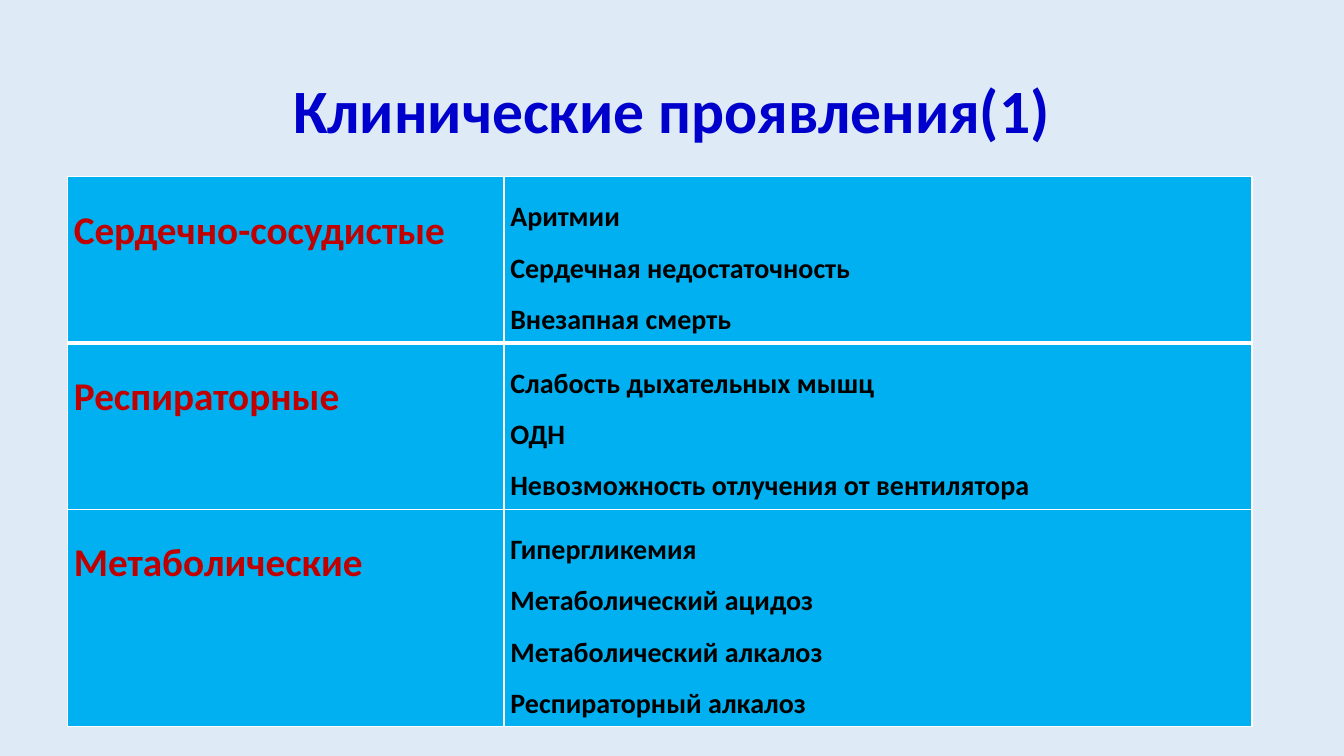
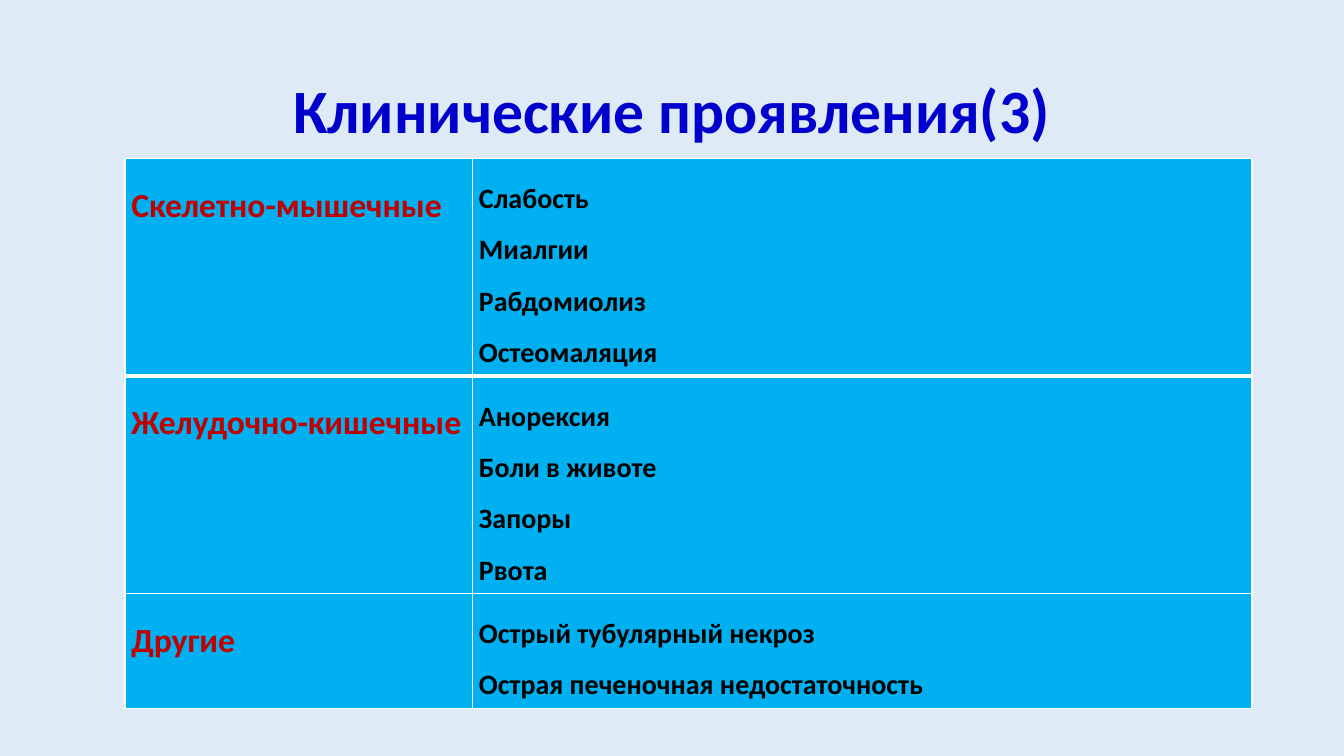
import pptx
import pptx.dml.color
import pptx.enum.text
import pptx.oxml
import pptx.oxml.ns
import pptx.util
from lxml import etree

Cm = pptx.util.Cm
Pt = pptx.util.Pt

COLORS = {
    "background": "DEEBF7",
    "title": "0000CC",
    "cell": "00B0F0",
    "category": "C00000",
    "symptom": "000000",
    "border": "FFFFFF",
}
FONT = "Calibri"
TITLE_SIZE = 44
SYMPTOM_SIZE = 20
CELL_MARGIN = 0.16
LINE_HEIGHT = 1.29
TABLE_RIGHT = 31.55

SLIDES = [
    {
        "title": "Клинические проявления(1)",
        "left": 1.7, "top": 4.45, "category_width": 11, "category_size": 28,
        "rows": [
            ("Сердечно-сосудистые",
             ["Аритмии", "Сердечная недостаточность", "Внезапная смерть"]),
            ("Респираторные",
             ["Слабость дыхательных мышц", "ОДН",
              "Невозможность отлучения от вентилятора"]),
            ("Метаболические",
             ["Гипергликемия", "Метаболический ацидоз",
              "Метаболический алкалоз", "Респираторный алкалоз"]),
        ],
    },
    {
        "title": "Клинические проявления(3)",
        "left": 3.15, "top": 3.99, "category_width": 8.76, "category_size": 24,
        "rows": [
            ("Скелетно-мышечные",
             ["Слабость", "Миалгии", "Рабдомиолиз", "Остеомаляция"]),
            ("Желудочно-кишечные",
             ["Анорексия", "Боли в животе", "Запоры", "Рвота"]),
            ("Другие",
             ["Острый тубулярный некроз", "Острая печеночная недостаточность"]),
        ],
    },
]


def rgb(name):
    return pptx.dml.color.RGBColor.from_string(COLORS[name])


def write_lines(tf, lines, size, color, **paragraph_format):
    """Write one bold paragraph per line."""
    for i, line in enumerate(lines):
        p = tf.paragraphs[0] if i == 0 else tf.add_paragraph()
        for name, value in paragraph_format.items():
            setattr(p, name, value)
        r = p.add_run()
        r.text = line
        for name, value in {"name": FONT, "size": Pt(size), "bold": True}.items():
            setattr(r.font, name, value)
        r.font.color.rgb = rgb(color)


def add_title(s, text):
    tf = s.shapes.add_textbox(Cm(2.33), Cm(1.01), Cm(29.21), Cm(3.68)).text_frame
    tf.word_wrap = True
    tf.vertical_anchor = pptx.enum.text.MSO_ANCHOR.MIDDLE
    write_lines(tf, [text], TITLE_SIZE, "title", line_spacing=0.9,
                alignment=pptx.enum.text.PP_ALIGN.CENTER)


def set_borders(cell, **widths):
    """Draw cell borders; widths in points are keyed by side: L, R, T, B."""
    tc_pr = cell._tc.get_or_add_tcPr()
    for side, width in widths.items():
        ln = etree.SubElement(tc_pr, pptx.oxml.ns.qn(f"a:ln{side}"), w=str(Pt(width)))
        fill = etree.SubElement(ln, pptx.oxml.ns.qn("a:solidFill"))
        etree.SubElement(fill, pptx.oxml.ns.qn("a:srgbClr"), val=COLORS["border"])


def fill_cell(cell, lines, size, color, top, bottom):
    for side in ("left", "right", "top", "bottom"):
        setattr(cell, f"margin_{side}", Cm(CELL_MARGIN))
    set_borders(cell, L=1, R=1, T=top, B=bottom)
    cell.fill.solid()
    cell.fill.fore_color.rgb = rgb("cell")
    write_lines(cell.text_frame, lines, size, color, line_spacing=1.5)


def add_symptom_table(s, rows, left, top, category_width, category_size):
    width = TABLE_RIGHT - left
    heights = [len(symptoms) * LINE_HEIGHT + 2 * CELL_MARGIN for _, symptoms in rows]
    table = s.shapes.add_table(len(rows), 2, Cm(left), Cm(top),
                               Cm(width), Cm(sum(heights))).table
    table.columns[0].width = Cm(category_width)
    table.columns[1].width = Cm(width - category_width)
    for i, (category, symptoms) in enumerate(rows):
        table.rows[i].height = Cm(heights[i])
        # A heavy line separates the first row from the rest.
        borders = {"top": 3 if i == 1 else 1, "bottom": 3 if i == 0 else 1}
        fill_cell(table.cell(i, 0), [category], category_size, "category", **borders)
        fill_cell(table.cell(i, 1), symptoms, SYMPTOM_SIZE, "symptom", **borders)


def main():
    prs = pptx.Presentation()
    prs.slide_width, prs.slide_height = Cm(33.87), Cm(19.05)
    background = prs.slide_master.background.fill
    background.solid()
    background.fore_color.rgb = rgb("background")
    for content in SLIDES:
        s = prs.slides.add_slide(prs.slide_layouts[6])
        add_title(s, content["title"])
        add_symptom_table(s, content["rows"], content["left"], content["top"],
                          content["category_width"], content["category_size"])
    prs.save("out.pptx")


if __name__ == "__main__":
    main()
